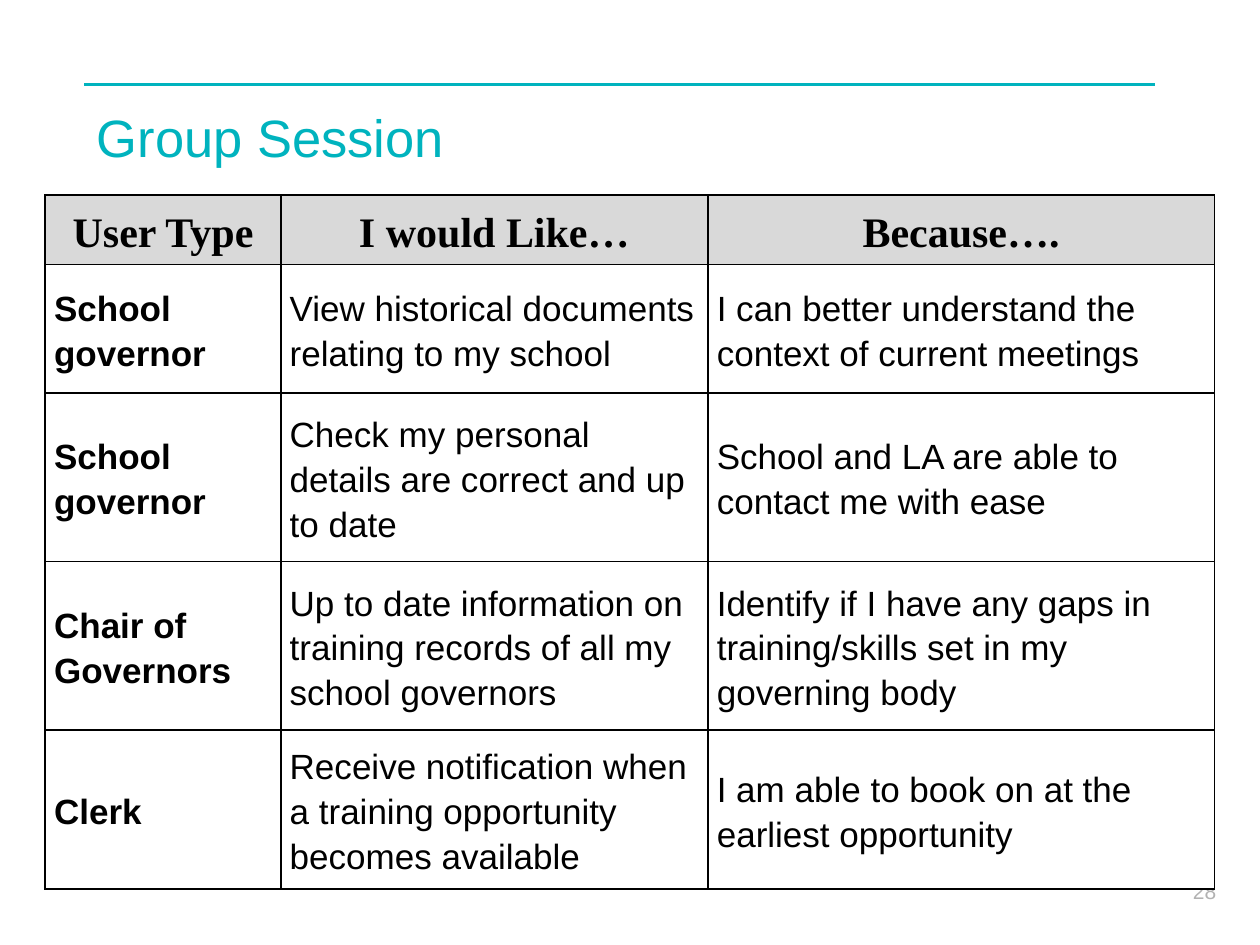
from lxml import etree
from pptx import Presentation
from pptx.dml.color import RGBColor
from pptx.enum import shapes, text
from pptx.oxml import ns
from pptx.util import Cm, Pt

# Content
TITLE = "Group Session"
PAGE_NUMBER = "28"
HEADER = ("User Type", "I would Like…", "Because….")
STORIES = [
    ("School governor", "View historical documents relating to my school",
     "I can better understand the context of current meetings"),
    ("School governor", "Check my personal details are correct and up to date",
     "School and LA are able to contact me with ease"),
    ("Chair of Governors",
     "Up to date information on training records of all my school governors",
     "Identify if I have any gaps in training/skills set in my governing body"),
    ("Clerk", "Receive notification when a training opportunity becomes available",
     "I am able to book on at the earliest opportunity"),
]

# Layout in centimetres
COLUMN_WIDTHS = (4.75, 8.61, 10.21)
ROW_HEIGHTS = (1.4, 2.59, 3.4, 3.4, 3.2)
LEFT, CONTENT_WIDTH, RULE_TOP = 1.7, 21.59, 1.7

# Colours
TEAL = RGBColor(0x00, 0xB3, 0xBE)
GREY = RGBColor(0xB2, 0xB2, 0xB2)
HEADER_FILL = RGBColor(0xD9, 0xD9, 0xD9)
WHITE = RGBColor(0xFF, 0xFF, 0xFF)
BLACK = RGBColor(0x00, 0x00, 0x00)


def set_font(paragraph, size, color, name="Arial", bold=False):
    font = paragraph.font
    font.name, font.size, font.bold = name, Pt(size), bold
    font.color.rgb = color


def add_borders(cell, color, width):
    properties = cell._tc.get_or_add_tcPr()
    for side in ("a:lnL", "a:lnR", "a:lnT", "a:lnB"):
        line = etree.SubElement(properties, ns.qn(side), w=str(Pt(width)))
        fill = etree.SubElement(line, ns.qn("a:solidFill"))
        etree.SubElement(fill, ns.qn("a:srgbClr"), val=str(color))


def format_cell(cell, content, is_header, is_first_column):
    add_borders(cell, BLACK, 1)
    cell.fill.solid()
    cell.fill.fore_color.rgb = HEADER_FILL if is_header else WHITE
    cell.vertical_anchor = text.MSO_ANCHOR.MIDDLE
    cell.margin_left = cell.margin_right = Cm(0.18)
    cell.margin_top = cell.margin_bottom = 0
    cell.text = content
    paragraph = cell.text_frame.paragraphs[0]
    paragraph.line_spacing = 1.15
    if is_header:
        paragraph.alignment = text.PP_ALIGN.CENTER
        set_font(paragraph, 24, BLACK, "Times New Roman", bold=True)
    else:
        set_font(paragraph, 20, BLACK, bold=is_first_column)


def main():
    presentation = Presentation()
    presentation.slide_width, presentation.slide_height = Cm(25.4), Cm(19.05)
    slide = presentation.slides.add_slide(presentation.slide_layouts[5])

    # Title
    title = slide.shapes.title
    title.left, title.top = Cm(LEFT), Cm(2)
    title.width, title.height = Cm(CONTENT_WIDTH), Cm(3.18)
    frame = title.text_frame
    frame.text = TITLE
    frame.auto_size = text.MSO_AUTO_SIZE.NONE
    frame.vertical_anchor = text.MSO_ANCHOR.TOP
    frame.paragraphs[0].alignment = text.PP_ALIGN.LEFT
    set_font(frame.paragraphs[0], 30, TEAL)

    # Rule above the title
    rule = slide.shapes.add_connector(
        shapes.MSO_CONNECTOR.STRAIGHT, Cm(LEFT), Cm(RULE_TOP),
        Cm(LEFT + CONTENT_WIDTH), Cm(RULE_TOP))
    rule.line.color.rgb = TEAL
    rule.line.width = Pt(1.5)
    etree.SubElement(rule._element.spPr, ns.qn("a:effectLst"))

    # Page number, partly behind the table
    number = slide.shapes.add_textbox(Cm(19.89), Cm(17.58), Cm(4.88), Cm(0.76))
    number.text_frame.word_wrap = True
    number.text_frame.text = PAGE_NUMBER
    paragraph = number.text_frame.paragraphs[0]
    paragraph.alignment = text.PP_ALIGN.RIGHT
    set_font(paragraph, 12, GREY)

    # Table of user stories
    rows = [HEADER, *STORIES]
    table = slide.shapes.add_table(
        len(rows), len(HEADER), Cm(0.91), Cm(3.93),
        Cm(sum(COLUMN_WIDTHS)), Cm(sum(ROW_HEIGHTS))).table
    table.horz_banding = False
    for column, width in zip(table.columns, COLUMN_WIDTHS):
        column.width = Cm(width)
    for row, height in zip(table.rows, ROW_HEIGHTS):
        row.height = Cm(height)
    for i, row in enumerate(rows):
        for j, content in enumerate(row):
            format_cell(table.cell(i, j), content, i == 0, j == 0)

    presentation.save("out.pptx")


if __name__ == "__main__":
    main()
